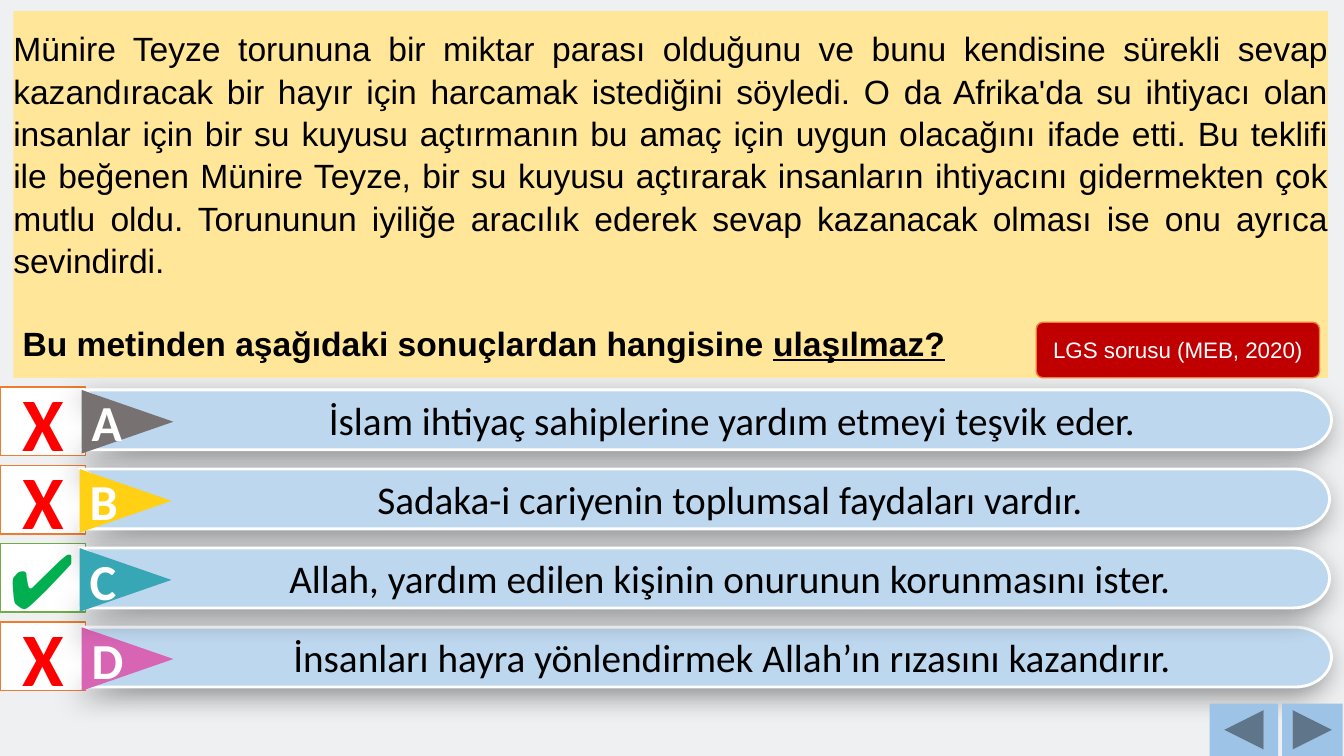
"""Build a multiple-choice quiz slide with a question panel and four answer bars."""
from math import cos, pi, sin

from lxml.etree import SubElement
from pptx import Presentation
from pptx.dml.color import RGBColor
from pptx.enum.shapes import MSO_SHAPE
from pptx.enum.text import MSO_ANCHOR, PP_ALIGN
from pptx.oxml.ns import qn
from pptx.util import Pt

COLORS = {
    "background": "EEF0F2", "panel": "FFE699", "bar": "BDD7EE", "edge": "FFFFFF",
    "white": "FFFFFF", "black": "000000", "wrong": "FF0000", "right": "00B050",
    "orange": "ED7D31", "green": "70AD47", "badge": "C00000", "button": "9DC3E6",
    "A": "777171", "B": "FFD013", "C": "38A7B5", "D": "D864B4",
}
ANSWERS = [
    ("A", 0, 58.3, "İslam ihtiyaç sahiplerine yardım etmeyi teşvik eder."),
    ("B", 1, 56.9, "Sadaka-i cariyenin toplumsal faydaları vardır."),
    ("D", 3, 58.3, "İnsanları hayra yönlendirmek Allah’ın rızasını kazandırır."),
    ("C", 2, 56.9, "Allah, yardım edilen kişinin onurunun korunmasını ister."),
]
CORRECT = "C"
BAR_WIDTH, BAR_HEIGHT, CAP_WIDTH, NOTCH = 892.8, 42.8, 26, 44.8
STORY = (
    "Münire Teyze torununa bir miktar parası olduğunu ve bunu kendisine sürekli sevap "
    "kazandıracak bir hayır için harcamak istediğini söyledi. O da Afrika'da su ihtiyacı "
    "olan insanlar için bir su kuyusu açtırmanın bu amaç için uygun olacağını ifade etti. "
    "Bu teklifi ile beğenen Münire Teyze, bir su kuyusu açtırarak insanların ihtiyacını "
    "gidermekten çok mutlu oldu. Torununun iyiliğe aracılık ederek sevap kazanacak olması "
    "ise onu ayrıca sevindirdi."
)


def paint(shape, fill, line=None, width=1):
    """Set fill and outline and remove the theme shadow."""
    shape.shadow.inherit = False
    shape.fill.solid()
    shape.fill.fore_color.rgb = RGBColor.from_string(COLORS[fill])
    if line:
        shape.line.color.rgb = RGBColor.from_string(COLORS[line])
        shape.line.width = Pt(width)
    else:
        shape.line.fill.background()


def write(shape, text, size, color, font="Calibri", bold=False, align=PP_ALIGN.CENTER):
    """Put one formatted paragraph in the middle of a shape."""
    frame = shape.text_frame
    frame.text = text
    frame.word_wrap = True
    frame.vertical_anchor = MSO_ANCHOR.MIDDLE
    paragraph = frame.paragraphs[0]
    paragraph.alignment = align
    for run in paragraph.runs:
        run.font.name = font
        run.font.size = Pt(size)
        run.font.bold = bold
        run.font.color.rgb = RGBColor.from_string(COLORS[color])
    return paragraph


presentation = Presentation()
presentation.slide_width, presentation.slide_height = Pt(960), Pt(540)
slide = presentation.slides.add_slide(presentation.slide_layouts[6])
slide.background.fill.solid()
slide.background.fill.fore_color.rgb = RGBColor.from_string(COLORS["background"])
shapes = slide.shapes

for letter, row, left, answer in ANSWERS:
    correct = letter == CORRECT
    mark = shapes.add_shape(MSO_SHAPE.RECTANGLE, Pt(0), Pt(276.5 + 55.9 * row), Pt(61.2), Pt(49))
    paint(mark, "white", "green" if correct else "orange")
    if correct:
        write(mark, "✔", 54, "right", align=PP_ALIGN.LEFT)
    else:
        write(mark, "X", 54, "wrong", bold=True)

for letter, row, left, answer in ANSWERS:
    top = 278.5 + 56.5 * row
    middle = top + BAR_HEIGHT / 2
    cap_left = left + BAR_WIDTH - CAP_WIDTH
    angles = [-pi / 2 + pi * step / 24 for step in range(25)]
    outline = [
        (cap_left + CAP_WIDTH * cos(angle), middle + BAR_HEIGHT / 2 * sin(angle))
        for angle in angles
    ]
    outline += [(left, top + BAR_HEIGHT), (left + NOTCH, middle)]
    builder = shapes.build_freeform(Pt(left), Pt(top))
    builder.add_line_segments([(Pt(x), Pt(y)) for x, y in outline], close=True)
    bar = builder.convert_to_shape()
    paint(bar, "bar", "edge", 2)
    effects = bar._element.spPr.find(qn("a:effectLst"))
    shadow = SubElement(effects, qn("a:outerShdw"), blurRad=str(Pt(20)), dist=str(Pt(7)),
                        dir="8100000", algn="tr", rotWithShape="0")
    shadow_color = SubElement(shadow, qn("a:srgbClr"), val=COLORS["black"])
    SubElement(shadow_color, qn("a:alpha"), val="40000")
    paragraph = write(bar, answer, 28, "black")
    paragraph._p.get_or_add_pPr().set("marL", str(Pt(36)))

    arrow = shapes.add_shape(MSO_SHAPE.ISOSCELES_TRIANGLE, Pt(left + 10.1), Pt(top - 10),
                             Pt(45.4), Pt(65.5))
    arrow.rotation = 90
    paint(arrow, letter)
    write(arrow, letter, 36, "white", bold=True)
    arrow.text_frame._txBody.bodyPr.set("vert", "vert270")

panel = shapes.add_shape(MSO_SHAPE.RECTANGLE, Pt(9.5), Pt(8), Pt(939), Pt(262))
paint(panel, "panel")
story = write(panel, STORY, 24, "black", "Arial", align=PP_ALIGN.JUSTIFY)
story.line_spacing = 1.05
frame = panel.text_frame
frame.margin_left = frame.margin_right = frame.margin_top = frame.margin_bottom = 0
question = frame.add_paragraph()
question.alignment = PP_ALIGN.JUSTIFY
question.line_spacing = 1.05
question.space_before = Pt(29)
question._p.get_or_add_pPr().set("marL", str(Pt(6.67)))
for text, underlined in [("Bu metinden aşağıdaki sonuçlardan hangisine ", False),
                         ("ulaşılmaz?", True)]:
    run = question.add_run()
    run.text = text
    run.font.name = "Arial"
    run.font.size = Pt(24)
    run.font.bold = True
    run.font.underline = underlined
    run.font.color.rgb = RGBColor.from_string(COLORS["black"])

for kind, left, width in [(MSO_SHAPE.ACTION_BUTTON_BACK_OR_PREVIOUS, 864, 49),
                          (MSO_SHAPE.ACTION_BUTTON_FORWARD_OR_NEXT, 915.8, 43.2)]:
    button = shapes.add_shape(kind, Pt(left), Pt(502.6), Pt(width), Pt(37.4))
    paint(button, "button")

badge = shapes.add_shape(MSO_SHAPE.ROUNDED_RECTANGLE, Pt(740.2), Pt(230.2), Pt(202.3), Pt(39.6))
badge.adjustments[0] = 0.12
paint(badge, "badge", "orange")
write(badge, "LGS sorusu (MEB, 2020)", 16, "white", "Arial")

presentation.save("out.pptx")
